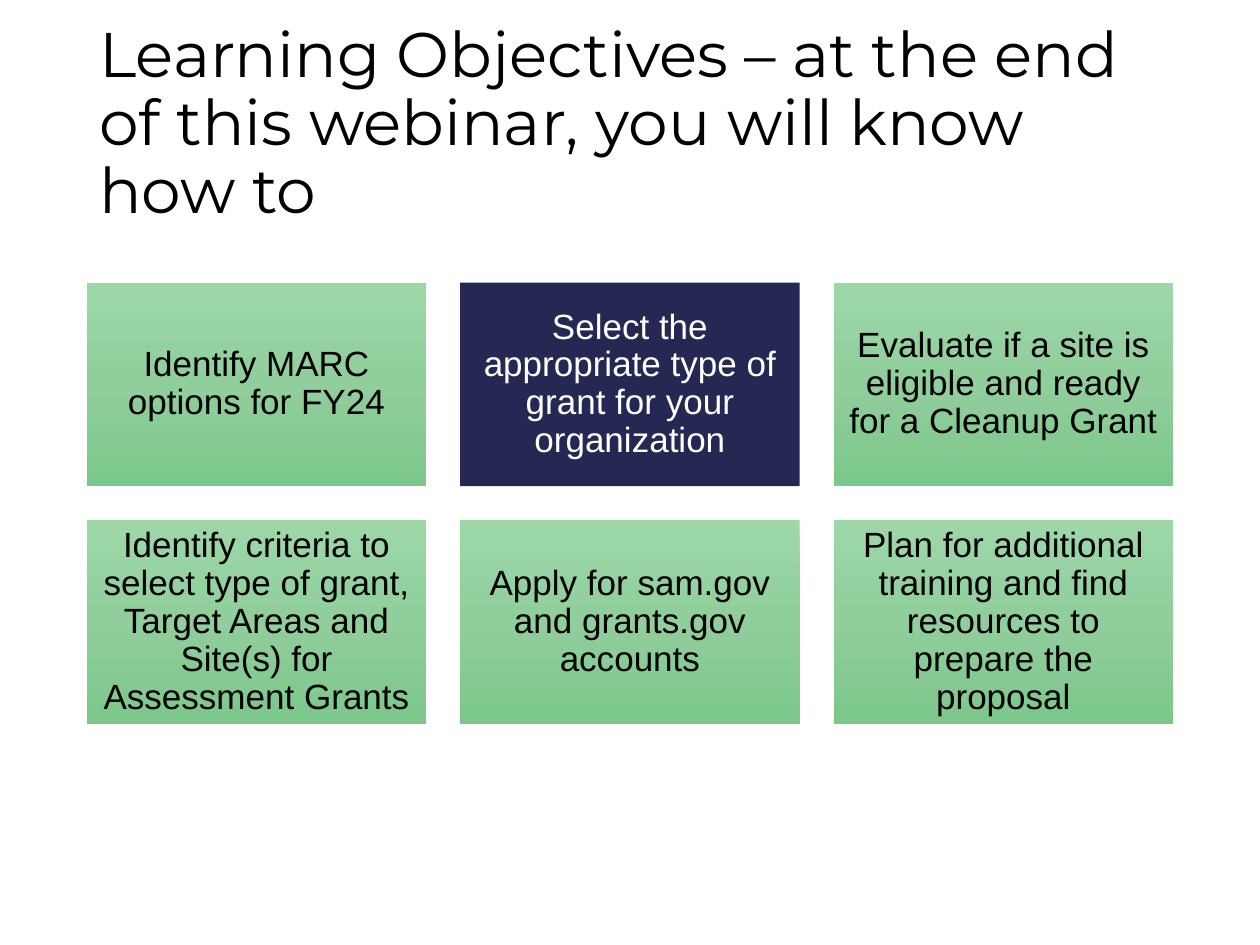
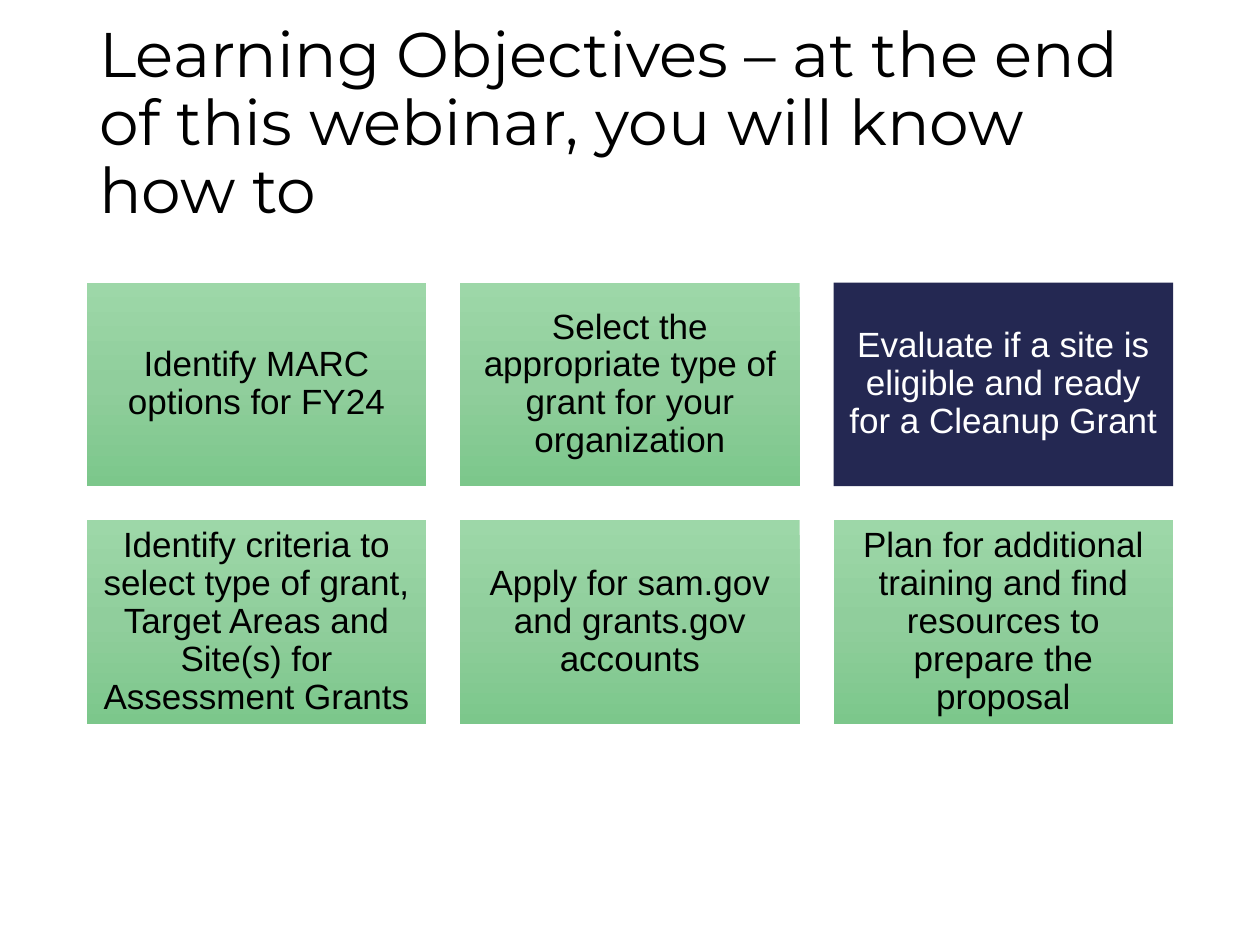
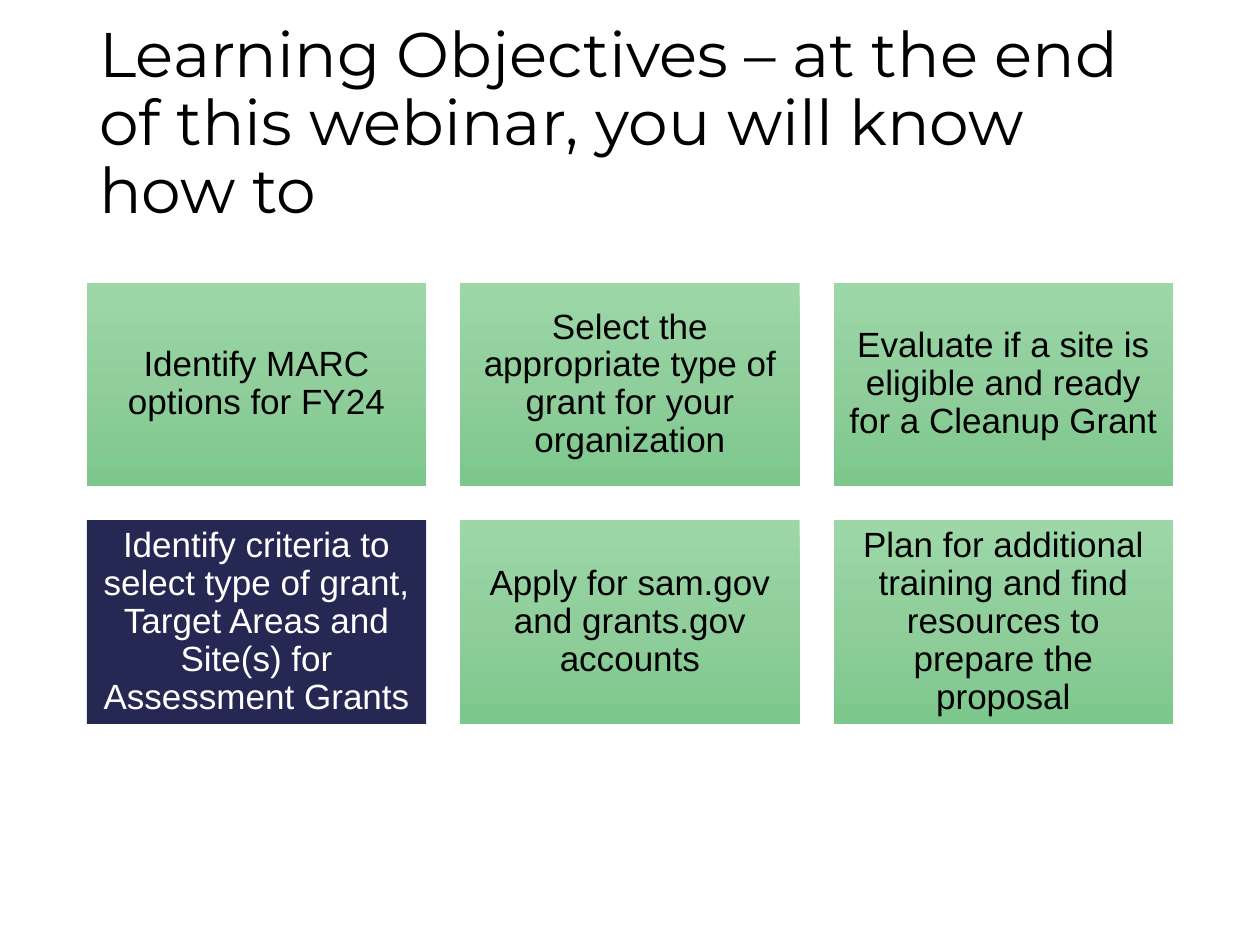
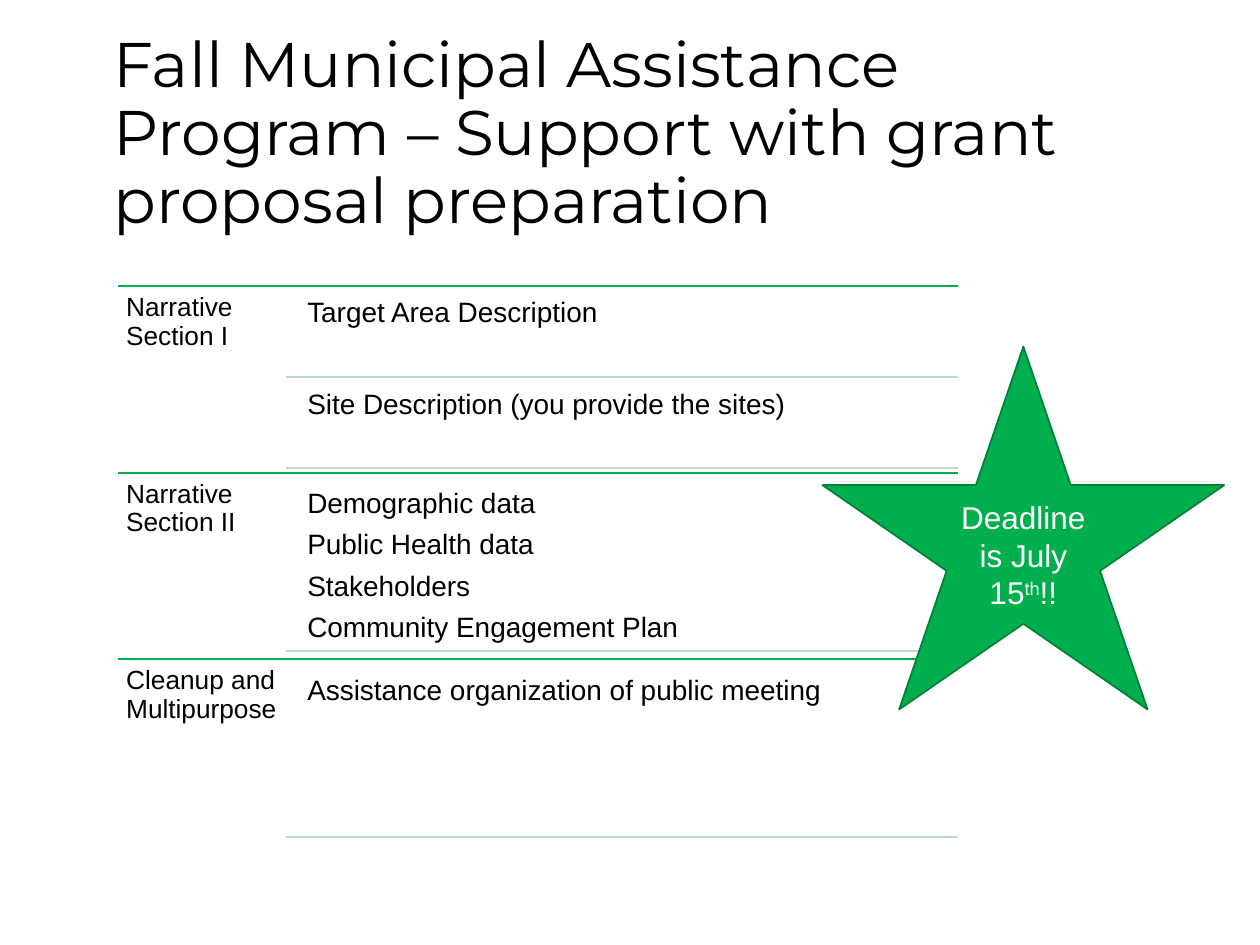
from copy import deepcopy

from lxml.etree import SubElement
from pptx import Presentation
from pptx.dml.color import RGBColor
from pptx.enum.shapes import MSO_CONNECTOR, MSO_SHAPE
from pptx.enum.text import MSO_ANCHOR, MSO_AUTO_SIZE, PP_ALIGN
from pptx.oxml.ns import qn
from pptx.util import Pt

BLACK = RGBColor(0x00, 0x00, 0x00)
WHITE = RGBColor(0xFF, 0xFF, 0xFF)
NAVY = RGBColor(0x24, 0x28, 0x52)
GREEN = RGBColor(0x00, 0xAE, 0x4D)
DARK_GREEN = RGBColor(0x00, 0x81, 0x39)
PALE_GREEN = RGBColor(0xBD, 0xDB, 0xC2)
CARD_GREENS = (RGBColor(0x9D, 0xD7, 0xA8), RGBColor(0x90, 0xCE, 0x9C),
               RGBColor(0x7C, 0xC7, 0x8B))

TITLE_FONT = "Montserrat"
BODY_FONT = "Arial"
TITLE_SIZE = (620.6, 104.4)
TITLE_ONLY = 5

OBJECTIVES_TITLE = ("Learning Objectives – at the end of this webinar, "
                    "you will know how to")
OBJECTIVES = [
    "Identify MARC options for FY24",
    "Select the appropriate type of grant for your organization",
    "Evaluate if a site is eligible and ready for a Cleanup Grant",
    "Identify criteria to select type of grant, Target Areas and Site(s) "
    "for Assessment Grants",
    "Apply for sam.gov and grants.gov accounts",
    "Plan for additional training and find resources to prepare the proposal",
]
HIGHLIGHTS = [1, 2, 3]

SUPPORT_TITLE = ("Fall Municipal Assistance Program – Support with grant "
                 "proposal preparation")
# Section label, then the rows of the section; a row is a list of paragraphs
SECTIONS = [
    ("Narrative Section I", [["Target Area Description"],
                             ["Site Description (you provide the sites)"]]),
    ("Narrative Section II", [["Demographic data", "Public Health data",
                               "Stakeholders", "Community Engagement Plan"]]),
    ("Cleanup and Multipurpose",
     [["Assistance organization of public meeting"]]),
]


def style(p, size, color=BLACK, name=BODY_FONT, align=PP_ALIGN.LEFT, spacing=0.9):
    p.alignment = align
    p.line_spacing = spacing
    p.font.size = Pt(size)
    p.font.name = name
    p.font.color.rgb = color


def set_insets(tf, inset):
    tf.margin_left = tf.margin_right = Pt(inset)
    tf.margin_top = tf.margin_bottom = Pt(inset)


def add_titled_slide(prs, title, left, top):
    slide = prs.slides.add_slide(prs.slide_layouts[TITLE_ONLY])
    sp = slide.shapes.title
    sp.left, sp.top = Pt(left), Pt(top)
    sp.width, sp.height = map(Pt, TITLE_SIZE)
    tf = sp.text_frame
    tf.text = title
    tf.auto_size = MSO_AUTO_SIZE.NONE
    tf.vertical_anchor = MSO_ANCHOR.MIDDLE
    style(tf.paragraphs[0], 36, name=TITLE_FONT)
    return slide


def add_filled_shape(slide, kind, left, top, width, height):
    sp = slide.shapes.add_shape(kind, Pt(left), Pt(top), Pt(width), Pt(height))
    sp.shadow.inherit = False
    sp.text_frame.word_wrap = True
    sp.text_frame.vertical_anchor = MSO_ANCHOR.MIDDLE
    return sp


def fill_card_gradient(sp):
    """Fill from top to bottom with the three card greens."""
    sp.fill.gradient()
    sp.fill.gradient_angle = 270
    stops = sp.element.spPr.find(".//" + qn("a:gsLst"))
    stops.insert(1, deepcopy(stops[0]))
    for i, (stop, color) in enumerate(zip(sp.fill.gradient_stops, CARD_GREENS)):
        stop.position = i / 2
        stop.color.rgb = color


def add_card(slide, text, left, top, width, height, highlighted):
    sp = add_filled_shape(slide, MSO_SHAPE.RECTANGLE, left, top, width, height)
    sp.line.fill.background()
    if highlighted:
        sp.fill.solid()
        sp.fill.fore_color.rgb = NAVY
    else:
        fill_card_gradient(sp)
    tf = sp.text_frame
    set_insets(tf, 6)
    tf.text = text
    style(tf.paragraphs[0], 20, WHITE if highlighted else BLACK,
          align=PP_ALIGN.CENTER)


def add_card_grid(slide, left, top, width, highlight, columns=3):
    """Lay the objectives out in a grid; gaps and heights follow card width."""
    card_w = width / (columns + 0.1 * (columns - 1))
    card_h, gap = 0.6 * card_w, 0.1 * card_w
    for i, text in enumerate(OBJECTIVES):
        row, column = divmod(i, columns)
        add_card(slide, text, left + column * (card_w + gap),
                 top + row * (card_h + gap), card_w, card_h, i == highlight)


def add_rule(slide, left, right, y, color):
    line = slide.shapes.add_connector(MSO_CONNECTOR.STRAIGHT,
                                      Pt(left), Pt(y), Pt(right), Pt(y))
    line.line.color.rgb = color
    line.line.width = Pt(1)
    SubElement(line.element.spPr, qn("a:effectLst"))


def add_text(slide, lines, left, top, width, height, size, inset):
    sp = slide.shapes.add_textbox(Pt(left), Pt(top), Pt(width), Pt(height))
    tf = sp.text_frame
    tf.word_wrap = True
    set_insets(tf, inset)
    tf.text = "\n".join(lines)
    for p in tf.paragraphs:
        style(p, size)
        p.space_after = Pt(6.3)


def add_section(slide, label, rows, left, top, width, height):
    """Draw a ruled section: label on the left, ruled rows on the right."""
    right = left + width
    label_w = 0.2 * width
    text_left = left + label_w + 0.015 * width
    row_h = height / (len(rows) + 0.05 * (len(rows) + 1))
    gap = 0.05 * row_h
    add_rule(slide, left, right, top, GREEN)
    add_text(slide, [label], left, top, label_w, height, 15, 4.5)
    for i, lines in enumerate(rows):
        row_top = top + gap + i * (row_h + gap)
        add_text(slide, lines, text_left, row_top, right - text_left, row_h, 16, 4.8)
        add_rule(slide, left + label_w, right, row_top + row_h, PALE_GREEN)


def add_section_list(slide, left, top, width, height):
    section_h = height / len(SECTIONS)
    for i, (label, rows) in enumerate(SECTIONS):
        add_section(slide, label, rows, left, top + i * section_h, width, section_h)


def add_deadline_star(slide, left, top, width, height):
    sp = add_filled_shape(slide, MSO_SHAPE.STAR_5_POINT, left, top, width, height)
    sp.fill.solid()
    sp.fill.fore_color.rgb = GREEN
    sp.line.color.rgb = DARK_GREEN
    sp.line.width = Pt(1)
    p = sp.text_frame.paragraphs[0]
    for text in ("Deadline is July 15", "th", "!!"):
        r = p.add_run()
        r.text = text
        if text == "th":
            r.font._element.set("baseline", "30000")
    style(p, 18, WHITE, align=PP_ALIGN.CENTER, spacing=1.0)


def add_objectives_slide(prs, highlight):
    slide = add_titled_slide(prs, OBJECTIVES_TITLE, 49.6, 19.5)
    add_card_grid(slide, 49.6, 161.5, 620.8, highlight)


def add_support_slide(prs):
    slide = add_titled_slide(prs, SUPPORT_TITLE, 57.6, 25.2)
    add_section_list(slide, 67.6, 163.5, 480, 319.8)
    add_deadline_star(slide, 470, 198, 229.6, 207.4)


def main():
    prs = Presentation()
    prs.slide_width, prs.slide_height = Pt(720), Pt(540)
    for highlight in HIGHLIGHTS:
        add_objectives_slide(prs, highlight)
    add_support_slide(prs)
    prs.save("out.pptx")


if __name__ == "__main__":
    main()
